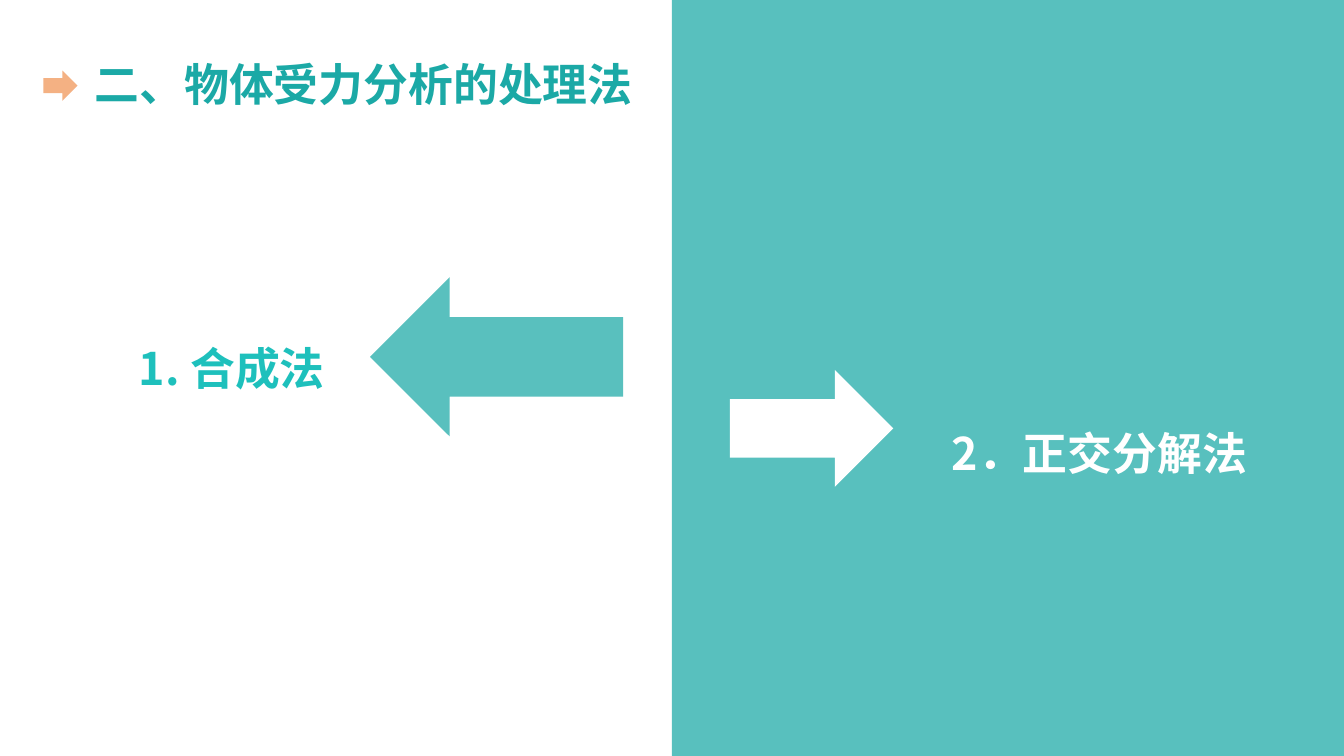
from lxml.etree import SubElement
from pptx import Presentation
from pptx.dml.color import RGBColor
from pptx.enum.shapes import MSO_SHAPE as Shape
from pptx.oxml.ns import qn
from pptx.util import Inches, Pt

FONT = "Noto Sans CJK SC"
COLORS = {
    "teal": "1BA9A6",
    "aqua": "1EC0BC",
    "soft_teal": "59C0BE",
    "orange": "F4B183",
    "white": "FFFFFF",
}
PANEL_OPACITY = 73
WIDTH, HEIGHT = 13.33, 7.5

TEXTS = [
    ("二、物体受力分析的处理法", (0.84, 0.51, 6.67, 0.64), "teal", 1),
    ("1. 合成法", (1.28, 2.8, 2.75, 1.48), "aqua", 2),
    ("2．正交分解法", (9.34, 3.64, 3.15, 1.7), "white", 2),
]
ARROWS = [
    ((0.43, 0.7, 0.34, 0.3), "orange", 0),
    ((7.24, 3.67, 1.62, 1.16), "white", 0),
    ((3.67, 2.75, 2.51, 1.58), "soft_teal", 180),
]


def color(name):
    return RGBColor.from_string(COLORS[name])


def add_filled(slide, kind, box, fill):
    shape = slide.shapes.add_shape(kind, *map(Inches, box))
    shape.shadow.inherit = False
    shape.fill.solid()
    shape.fill.fore_color.rgb = color(fill)
    shape.line.fill.background()
    return shape


def add_panel(slide):
    box = (WIDTH / 2, 0, WIDTH / 2, HEIGHT)
    panel = add_filled(slide, Shape.ROUNDED_RECTANGLE, box, "teal")
    panel.adjustments[0] = 0
    fill = panel._element.spPr.find(qn("a:solidFill"))
    SubElement(fill[0], qn("a:alpha"), val=str(PANEL_OPACITY * 1000))


def add_text(slide, text, box, ink, spacing):
    frame = slide.shapes.add_textbox(*map(Inches, box)).text_frame
    frame.word_wrap = True
    paragraph = frame.paragraphs[0]
    paragraph.line_spacing = float(spacing)
    run = paragraph.add_run()
    run.text = text
    run.font.name = FONT
    run.font.size = Pt(32)
    run.font.bold = True
    run.font.color.rgb = color(ink)
    SubElement(run.font._element, qn("a:ea"), typeface=FONT)


def main():
    presentation = Presentation()
    presentation.slide_width = Inches(WIDTH)
    presentation.slide_height = Inches(HEIGHT)
    slide = presentation.slides.add_slide(presentation.slide_layouts[6])
    add_panel(slide)
    for text in TEXTS:
        add_text(slide, *text)
    for box, fill, rotation in ARROWS:
        add_filled(slide, Shape.RIGHT_ARROW, box, fill).rotation = rotation
    presentation.save("out.pptx")


if __name__ == "__main__":
    main()
